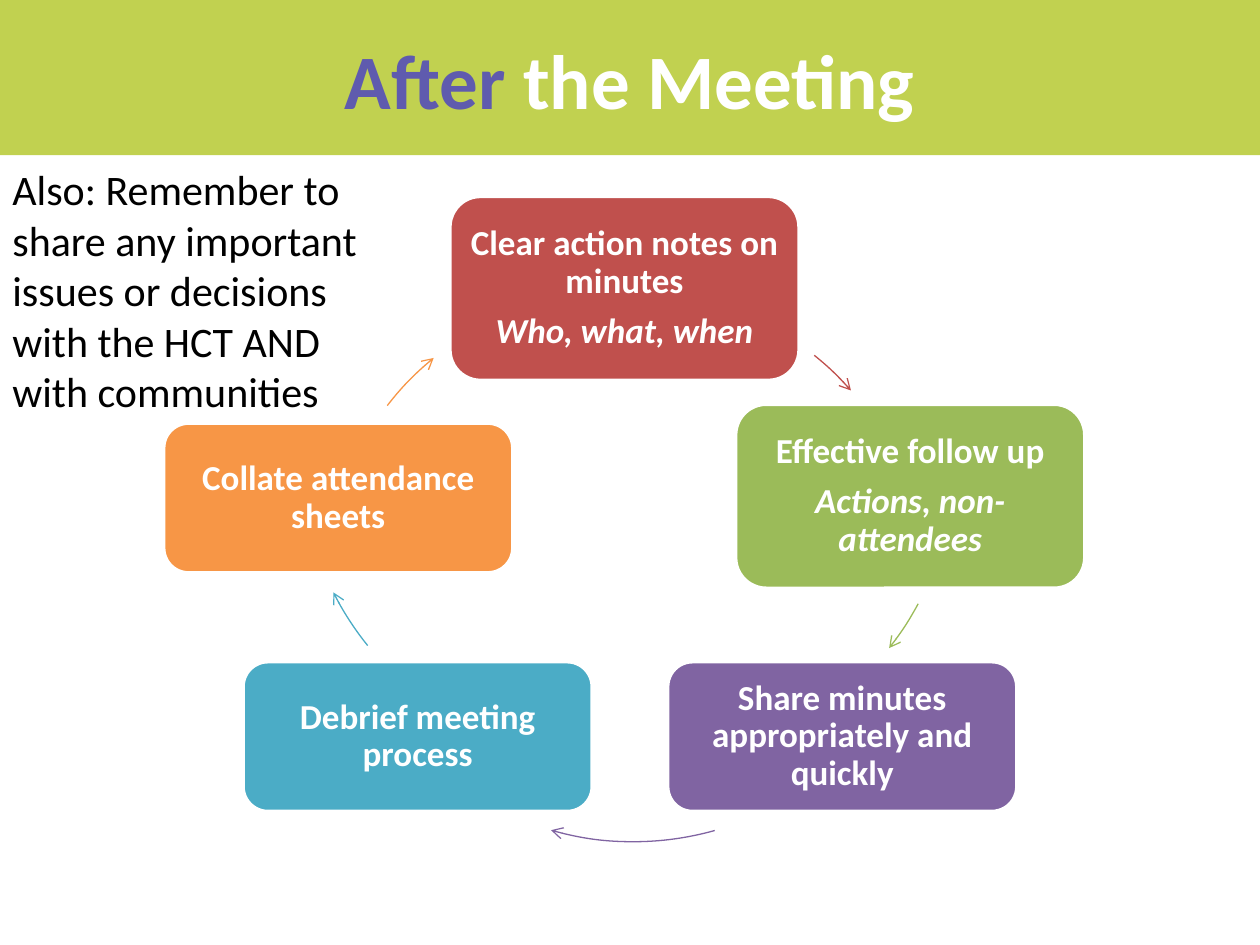
"""Build the "After the Meeting" slide: a five-step cycle with a reminder."""
from dataclasses import dataclass

from lxml.etree import SubElement
from pptx import Presentation
from pptx.dml.color import RGBColor
from pptx.enum.shapes import MSO_SHAPE as Shape
from pptx.enum.text import MSO_ANCHOR as Anchor, MSO_AUTO_SIZE as AutoSize, PP_ALIGN as Align
from pptx.oxml.ns import qn
from pptx.util import Cm, Pt

STEP_WIDTH = 7.04
ARC_SIZE = 12.12
WHITE = "FFFFFF"


@dataclass
class Step:
    """One rounded box of the cycle; left, top and height in cm."""
    color: str
    left: float
    top: float
    height: float
    label: str
    detail: str = ""


@dataclass
class Arc:
    """The arrow leaving a step; left and top in cm, angles in degrees."""
    left: float
    top: float
    start: float
    end: float


CYCLE = [
    (Step("C0504D", 9.07, 3.96, 3.71, "Clear action notes on minutes", "Who, what, when"),
     Arc(6.55, 5.82, 308.9, 318.6)),
    (Step("9BBB59", 14.83, 8.15, 3.71, "Effective follow up", "Actions, non-attendees"),
     Arc(7.11, 3.25, 28.2, 38.3)),
    (Step("8064A2", 13.46, 13.34, 3.02, "Share minutes appropriately and quickly"),
     Arc(6.71, 4.85, 74.3, 105.9)),
    (Step("4BACC6", 4.9, 13.34, 3.02, "Debrief meeting process"),
     Arc(6.07, 3.15, 141.1, 153.2)),
    (Step("F79646", 3.3, 8.53, 3.02, "Collate attendance sheets"),
     Arc(6.53, 5.84, 217.9, 230.6)),
]


def rgb(color: str) -> RGBColor:
    """Turn a hex string into a colour."""
    return RGBColor.from_string(color)


def set_all(target, values: dict) -> None:
    """Set each attribute of target from a dict of format values."""
    for name, value in values.items():
        setattr(target, name, value)


def add_span(para, text: str, size: int, color: str, **style) -> None:
    """Append a Calibri run to a paragraph."""
    span = para.add_run()
    span.text = text
    set_all(span.font, {"name": "Calibri", "size": Pt(size), **style})
    span.font.color.rgb = rgb(color)


def add_shape(page, kind, left: float, top: float, width: float, height: float):
    """Add a preset shape without shadow, fill or line."""
    shape = page.shapes.add_shape(kind, Cm(left), Cm(top), Cm(width), Cm(height))
    shape.shadow.inherit = False
    shape.fill.background()
    shape.line.fill.background()
    return shape


def paint(shape, color: str) -> None:
    """Give a shape a solid fill."""
    shape.fill.solid()
    shape.fill.fore_color.rgb = rgb(color)


def outline(shape, color: str, width: float) -> None:
    """Give a shape a line."""
    shape.line.color.rgb = rgb(color)
    shape.line.width = Pt(width)


def add_text_box(page, left: float, top: float, width: float, height: float, **frame):
    """Add a wrapping text box and return its first paragraph."""
    box = page.shapes.add_textbox(Cm(left), Cm(top), Cm(width), Cm(height))
    set_all(box.text_frame, {"word_wrap": True, **frame})
    return box.text_frame.paragraphs[0]


def add_step(page, step: Step) -> None:
    """Draw one step of the cycle with its text."""
    shape = add_shape(page, Shape.ROUNDED_RECTANGLE, step.left, step.top, STEP_WIDTH, step.height)
    paint(shape, step.color)
    outline(shape, WHITE, 2)
    frame = shape.text_frame
    margins = {f"margin_{side}": Cm(0.21) for side in ("left", "top", "right", "bottom")}
    set_all(frame, {"word_wrap": True, "vertical_anchor": Anchor.MIDDLE, **margins})
    for index, text in enumerate(filter(None, (step.label, step.detail))):
        para = frame.add_paragraph() if index else frame.paragraphs[0]
        set_all(para, {"alignment": Align.CENTER, "line_spacing": 0.9, "space_after": Pt(7)})
        add_span(para, text, 20, WHITE, bold=True, italic=index == 1)


def add_arc(page, arc: Arc, color: str) -> None:
    """Draw a clockwise arc that ends in an open arrowhead."""
    shape = add_shape(page, Shape.ARC, arc.left, arc.top, ARC_SIZE, ARC_SIZE)
    for index, angle in enumerate((arc.start, arc.end)):
        shape.adjustments[index] = angle * 0.6
    outline(shape, color, 0.75)
    SubElement(shape.line._get_or_add_ln(), qn("a:tailEnd"), type="arrow")


def main() -> None:
    """Build and save the deck."""
    deck = Presentation()
    set_all(deck, {"slide_width": Cm(25.4), "slide_height": Cm(19.05)})
    page = deck.slides.add_slide(deck.slide_layouts[6])

    paint(add_shape(page, Shape.RECTANGLE, 0, -0.05, 25.4, 3.18), "C1D150")
    title = add_text_box(page, 0, 0, 25.4, 3.18, vertical_anchor=Anchor.MIDDLE)
    title.alignment = Align.CENTER
    add_span(title, "After ", 44, "5F5BAE", bold=True)
    add_span(title, "the Meeting", 44, WHITE, bold=True)

    for step, arc in CYCLE:
        add_step(page, step)
        add_arc(page, arc, step.color)

    reminder = add_text_box(page, 0, 3.18, 7.49, 5.38, auto_size=AutoSize.SHAPE_TO_FIT_TEXT)
    add_span(reminder, "Also: Remember to share any important issues or decisions "
             "with the HCT AND with communities", 24, "000000")
    deck.save("out.pptx")


if __name__ == "__main__":
    main()
